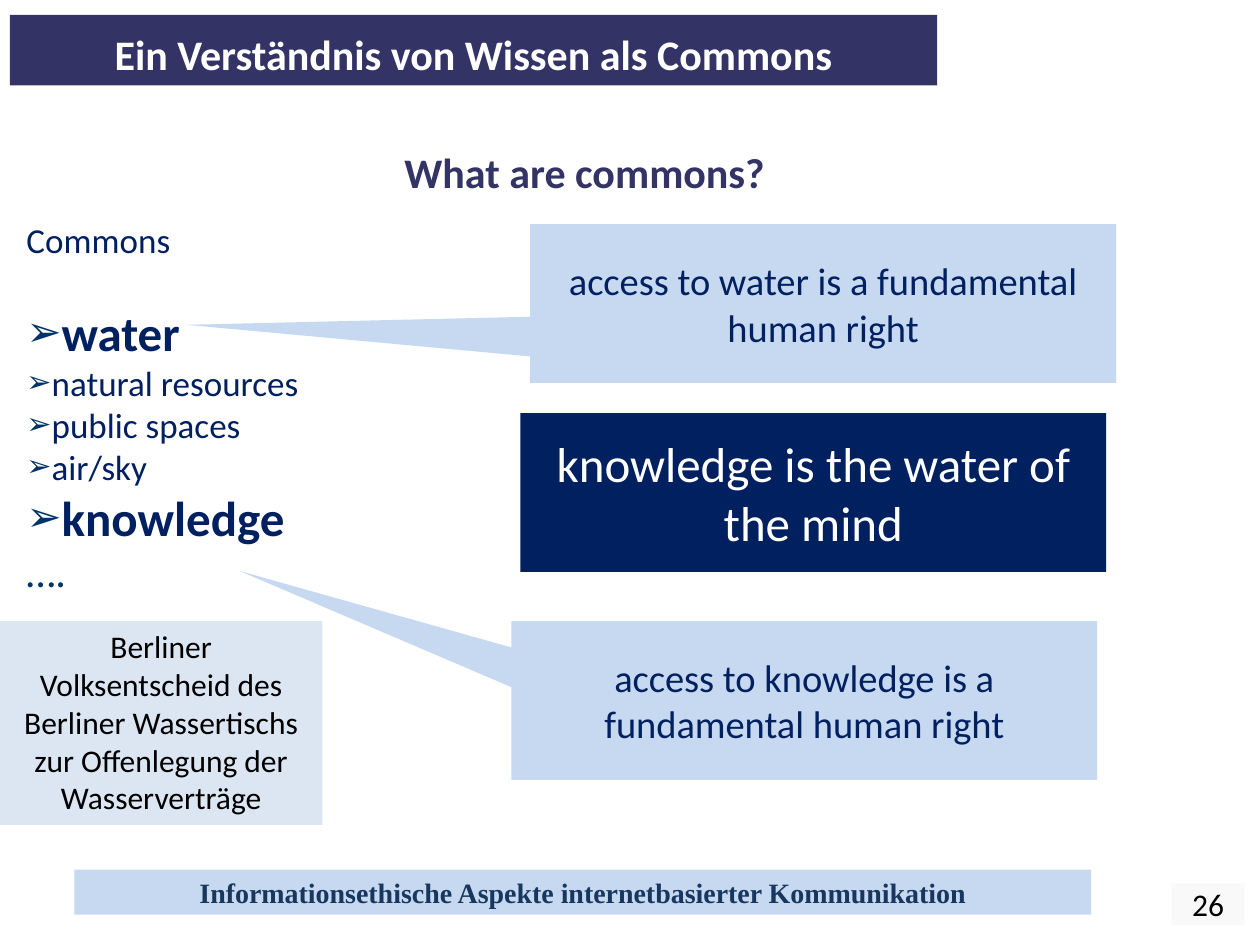
from dataclasses import dataclass
from typing import Optional

from lxml import etree
from pptx import Presentation
from pptx.dml.color import RGBColor
from pptx.enum import shapes, text
from pptx.oxml import ns
from pptx.util import Cm, Pt


@dataclass(frozen=True)
class Theme:
    sans: str = "Calibri"
    serif: str = "Times New Roman"
    indigo: str = "333366"
    navy: str = "002060"
    bullet: str = "003366"
    footer: str = "17375E"
    sky: str = "C6D9F1"
    mist: str = "DCE6F2"
    pale: str = "F9F9F9"
    white: str = "FFFFFF"
    black: str = "000000"
    footer_size: int = 16
    note_size: int = 18
    list_size: int = 20
    callout_size: int = 22
    title_size: int = 24
    strong_size: int = 28


THEME = Theme()


@dataclass(frozen=True)
class Style:
    size: int
    color: str
    bold: bool = False
    font: str = THEME.sans


@dataclass(frozen=True)
class Area:
    left: float
    top: float
    width: float
    height: float


@dataclass(frozen=True)
class Panel:
    words: str
    area: Area
    style: Style
    fill: Optional[str] = None
    anchor: text.MSO_ANCHOR = text.MSO_ANCHOR.MIDDLE
    tip: Optional[tuple[float, float]] = None
    wrap: bool = True
    inset: bool = True


@dataclass(frozen=True)
class Entry:
    words: str
    style: Style
    bulleted: bool = True
    gap: int = 0


PLAIN = Style(THEME.list_size, THEME.navy)
STRONG = Style(THEME.strong_size, THEME.navy, True)
CALLOUT = Style(THEME.callout_size, THEME.navy)
NOTE = Style(THEME.note_size, THEME.black)
BOX_WIDTH, BOX_HEIGHT = 11.81, 3.2

TITLE = Panel("Ein Verständnis von Wissen als Commons", Area(0.2, 0.3, 18.69, 1.42),
              Style(THEME.title_size, THEME.white, True), THEME.indigo, text.MSO_ANCHOR.BOTTOM)

PANELS = [
    Panel("26", Area(23.62, 17.81, 1.47, 0.84), NOTE, THEME.pale, wrap=False),
    Panel("Informationsethische Aspekte internetbasierter Kommunikation",
          Area(1.5, 17.53, 20.5, 0.91),
          Style(THEME.footer_size, THEME.footer, True, THEME.serif), THEME.sky, inset=False),
    Panel("access to water is a fundamental human right",
          Area(10.69, 4.52, BOX_WIDTH, BOX_HEIGHT), CALLOUT, THEME.sky, tip=(3.76, 6.55)),
    Panel("access to knowledge is a fundamental human right",
          Area(10.31, 12.52, BOX_WIDTH, BOX_HEIGHT), CALLOUT, THEME.sky, tip=(4.83, 11.51)),
    Panel("knowledge is the water of the mind",
          Area(10.49, 8.33, BOX_WIDTH, BOX_HEIGHT),
          Style(THEME.strong_size, THEME.white), THEME.navy),
    Panel("What are commons?", Area(3.63, 2.82, 16.31, 1.27),
          Style(THEME.title_size, THEME.indigo, True), anchor=text.MSO_ANCHOR.TOP),
    Panel("Berliner Volksentscheid des Berliner Wassertischs zur Offenlegung der Wasserverträge",
          Area(0, 12.52, 6.5, 4.11), NOTE, THEME.mist, text.MSO_ANCHOR.TOP),
]

LIST_AREA = Area(0.28, 4.27, 8.05, 7.62)
ENTRIES = [
    Entry("Commons", PLAIN, bulleted=False),
    Entry("water", STRONG, gap=24),
    Entry("natural resources", PLAIN),
    Entry("public spaces", PLAIN),
    Entry("air/sky", PLAIN),
    Entry("knowledge", STRONG),
    Entry("….", Style(THEME.title_size, THEME.bullet), bulleted=False),
]


def lengths(area: Area) -> tuple[Cm, Cm, Cm, Cm]:
    return Cm(area.left), Cm(area.top), Cm(area.width), Cm(area.height)


def place(shape, area: Area) -> None:
    shape.left, shape.top, shape.width, shape.height = lengths(area)


def format_para(para, style: Style) -> None:
    for span in para.runs:
        span.font.name = style.font
        span.font.size = Pt(style.size)
        span.font.bold = style.bold
        span.font.color.rgb = RGBColor.from_string(style.color)


def fill_panel(shape, panel: Panel) -> None:
    if panel.fill:
        shape.fill.solid()
        shape.fill.fore_color.rgb = RGBColor.from_string(panel.fill)
    frame = shape.text_frame
    frame.text = panel.words
    frame.word_wrap = panel.wrap
    frame.auto_size = text.MSO_AUTO_SIZE.NONE
    frame.vertical_anchor = panel.anchor
    if not panel.inset:
        frame.margin_left = frame.margin_right = frame.margin_top = frame.margin_bottom = 0
    para = frame.paragraphs[0]
    para.alignment = text.PP_ALIGN.CENTER
    format_para(para, panel.style)


def add_panel(page, panel: Panel) -> None:
    area = panel.area
    if panel.fill is None:
        shape = page.shapes.add_textbox(*lengths(area))
    else:
        kind = shapes.MSO_SHAPE.RECTANGULAR_CALLOUT if panel.tip else shapes.MSO_SHAPE.RECTANGLE
        shape = page.shapes.add_shape(kind, *lengths(area))
        shape.shadow.inherit = False
        shape.line.fill.background()
    if panel.tip:
        shape.adjustments[0] = (panel.tip[0] - area.left) / area.width - 0.5
        shape.adjustments[1] = (panel.tip[1] - area.top) / area.height - 0.5
    fill_panel(shape, panel)


def set_bullet(para, bulleted: bool) -> None:
    properties = para._p.get_or_add_pPr()
    properties.set("marL", "0")
    properties.set("indent", "0")
    if not bulleted:
        etree.SubElement(properties, ns.qn("a:buNone"))
        return
    color = etree.SubElement(properties, ns.qn("a:buClr"))
    etree.SubElement(color, ns.qn("a:srgbClr"), val=THEME.bullet)
    etree.SubElement(properties, ns.qn("a:buSzPct"), val="86000")
    etree.SubElement(properties, ns.qn("a:buChar"), char="➢")


def fill_list(body, entries: list[Entry]) -> None:
    frame = body.text_frame
    frame.text = "\n".join(entry.words for entry in entries)
    frame.auto_size = text.MSO_AUTO_SIZE.NONE
    for para, entry in zip(frame.paragraphs, entries):
        para.space_before = Pt(entry.gap)
        set_bullet(para, entry.bulleted)
        format_para(para, entry.style)


def main() -> None:
    deck = Presentation()
    deck.slide_width, deck.slide_height = Cm(25.4), Cm(19.05)
    page = deck.slides.add_slide(deck.slide_layouts[1])
    title, body = page.shapes.title, page.placeholders[1]
    place(title, TITLE.area)
    fill_panel(title, TITLE)
    place(body, LIST_AREA)
    fill_list(body, ENTRIES)
    for panel in PANELS:
        add_panel(page, panel)
    deck.save("out.pptx")


if __name__ == "__main__":
    main()
